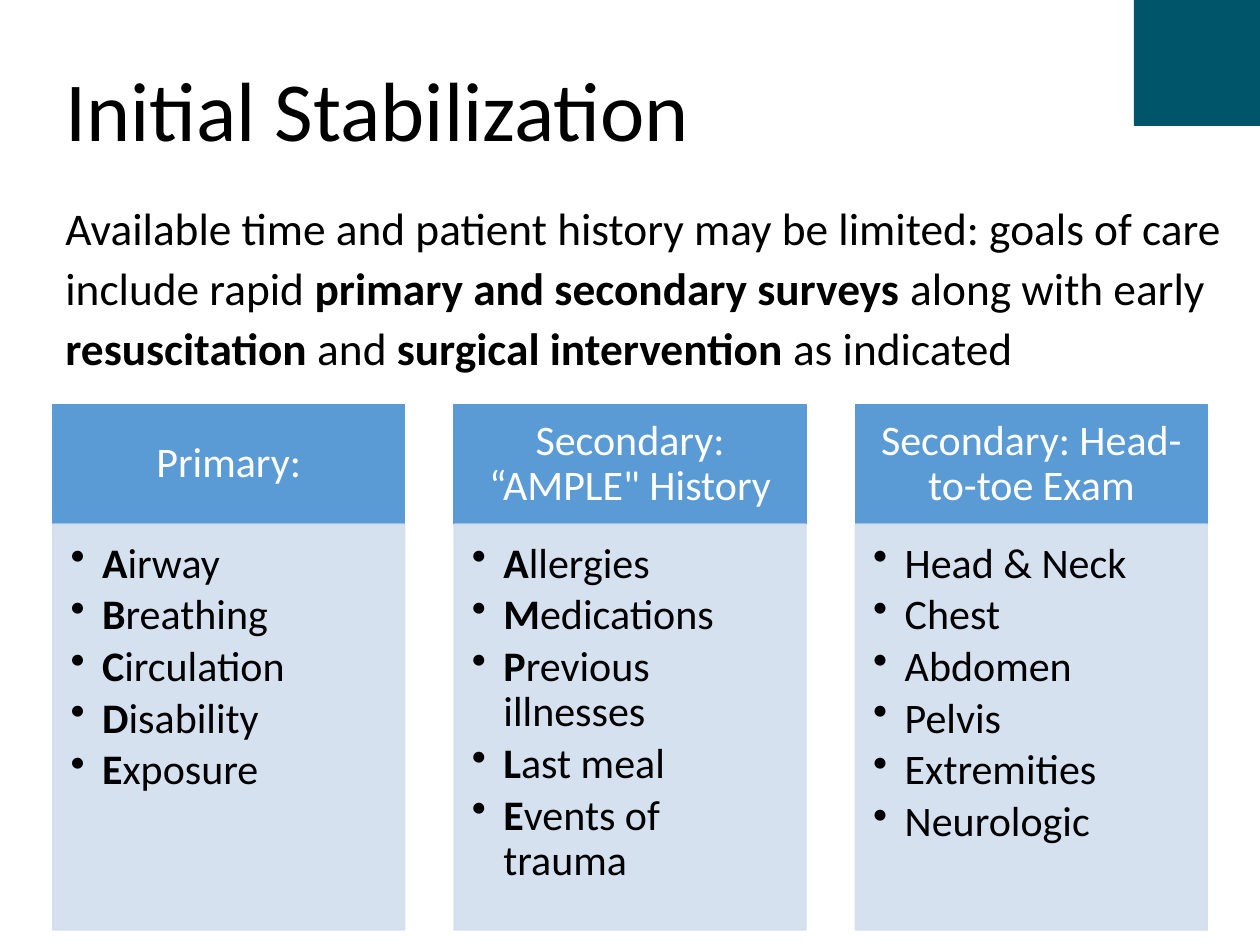
from dataclasses import dataclass
from typing import NamedTuple

from lxml import etree
from pptx import Presentation
from pptx.dml.color import RGBColor
from pptx.enum.shapes import MSO_SHAPE
from pptx.enum.text import MSO_ANCHOR, PP_ALIGN
from pptx.oxml.ns import qn
from pptx.util import Inches, Pt

RECTANGLE = MSO_SHAPE.RECTANGLE
TOP, MIDDLE = MSO_ANCHOR.TOP, MSO_ANCHOR.MIDDLE
LEFT, CENTER = PP_ALIGN.LEFT, PP_ALIGN.CENTER

COLORS = {
    "swoosh": "00556A",
    "header": "5B9BD5",
    "panel": "D2DEEF",
    "text": "000000",
    "header_text": "FFFFFF",
}
FONT = "Calibri"
COLUMN_LEFT, COLUMN_PITCH, COLUMN_WIDTH = 0.42, 3.185, 2.79
HEADER_TOP, HEADER_HEIGHT, PANEL_HEIGHT = 3.21, 0.95, 3.22
CURVE_STEPS = 60


class Box(NamedTuple):
    left: float
    top: float
    width: float
    height: float


class Piece(NamedTuple):
    text: str
    bold: bool = False


@dataclass
class Survey:
    heading: str
    items: list[str]
    mnemonic: bool


@dataclass
class Style:
    size: float
    color: str = "text"
    align: PP_ALIGN = LEFT
    line_spacing: float = 0.9
    space_after: float = 0


TITLE = Style(48)
SUMMARY = Style(25.9, line_spacing=1.1)
HEADING = Style(24, "header_text", CENTER)
ITEM = Style(24, space_after=3.6)

SUMMARY_PIECES = [
    Piece("Available time and patient history may be limited: goals of care include rapid "),
    Piece("primary and secondary surveys ", True),
    Piece("along with early "),
    Piece("resuscitation ", True),
    Piece("and "),
    Piece("surgical intervention ", True),
    Piece("as indicated"),
]
SURVEYS = [
    Survey("Primary:",
           ["Airway", "Breathing", "Circulation", "Disability", "Exposure"], True),
    Survey("Secondary: “AMPLE\" History",
           ["Allergies", "Medications", "Previous illnesses", "Last meal", "Events of trauma"],
           True),
    Survey("Secondary: Head-to-toe Exam",
           ["Head & Neck", "Chest", "Abdomen", "Pelvis", "Extremities", "Neurologic"], False),
]


def rgb(name: str) -> RGBColor:
    return RGBColor.from_string(COLORS[name])


def bezier(points: list[tuple[float, float]]) -> list[tuple[float, float]]:
    curve = []
    for step in range(1, CURVE_STEPS + 1):
        t = step / CURVE_STEPS
        weights = ((1 - t) ** 3, 3 * t * (1 - t) ** 2, 3 * t * t * (1 - t), t ** 3)
        curve.append(tuple(sum(w * p[axis] for w, p in zip(weights, points))
                           for axis in (0, 1)))
    return curve


def add_swoosh(slide) -> None:
    right_edge = bezier([(10, 0), (10, 0.14), (9.99, 1.15), (9.99, 1.29)])
    lower_edge = bezier([(9.99, 1.29), (9.98, 0), (3.36, 0.1), (0.03, 0.1)])
    builder = slide.shapes.build_freeform(0, 0, scale=Inches(1))
    builder.add_line_segments([(10, 0)] + right_edge + lower_edge, close=True)
    swoosh = builder.convert_to_shape()
    swoosh.shadow.inherit = False
    swoosh.fill.solid()
    swoosh.fill.fore_color.rgb = rgb("swoosh")
    swoosh.line.fill.background()


def write_paragraph(paragraph, pieces: list[Piece], style: Style) -> None:
    paragraph.alignment = style.align
    paragraph.line_spacing = style.line_spacing
    paragraph.space_after = Pt(style.space_after)
    for piece in pieces:
        run = paragraph.add_run()
        run.text = piece.text
        run.font.name = FONT
        run.font.size = Pt(style.size)
        run.font.bold = piece.bold
        run.font.color.rgb = rgb(style.color)


def set_frame(frame, anchor: MSO_ANCHOR, insets: tuple[float, ...]) -> None:
    frame.word_wrap = True
    frame.vertical_anchor = anchor
    (frame.margin_left, frame.margin_top,
     frame.margin_right, frame.margin_bottom) = map(Inches, insets)


def add_text(slide, box: Box, pieces: list[Piece], style: Style, anchor: MSO_ANCHOR) -> None:
    frame = slide.shapes.add_textbox(*map(Inches, box)).text_frame
    set_frame(frame, anchor, (0.1, 0.05, 0.1, 0.05))
    write_paragraph(frame.paragraphs[0], pieces, style)


def add_block(slide, box: Box, color: str, opacity: int = 100):
    block = slide.shapes.add_shape(RECTANGLE, *map(Inches, box))
    block.shadow.inherit = False
    block.fill.solid()
    block.fill.fore_color.rgb = rgb(color)
    block.line.color.rgb = rgb(color)
    block.line.width = Pt(1)
    if opacity < 100:
        for tint in block._element.spPr.iter(qn("a:srgbClr")):
            etree.SubElement(tint, qn("a:alpha")).set("val", str(opacity * 1000))
    return block


def add_bullet(paragraph) -> None:
    properties = paragraph._p.get_or_add_pPr()
    properties.set("marL", str(Inches(0.25)))
    properties.set("indent", str(Inches(-0.25)))
    etree.SubElement(properties, qn("a:buChar")).set("char", "•")


def add_survey(slide, survey: Survey, left: float) -> None:
    header = add_block(slide, Box(left, HEADER_TOP, COLUMN_WIDTH, HEADER_HEIGHT), "header")
    set_frame(header.text_frame, MIDDLE, (0.19, 0.11, 0.19, 0.11))
    write_paragraph(header.text_frame.paragraphs[0], [Piece(survey.heading)], HEADING)

    panel_box = Box(left, HEADER_TOP + HEADER_HEIGHT, COLUMN_WIDTH, PANEL_HEIGHT)
    frame = add_block(slide, panel_box, "panel", 90).text_frame
    set_frame(frame, TOP, (0.14, 0.14, 0.19, 0.21))
    for index, item in enumerate(survey.items):
        paragraph = frame.add_paragraph() if index else frame.paragraphs[0]
        add_bullet(paragraph)
        pieces = [Piece(item[0], True), Piece(item[1:])] if survey.mnemonic else [Piece(item)]
        write_paragraph(paragraph, pieces, ITEM)


def main() -> None:
    deck = Presentation()
    deck.slide_width, deck.slide_height = Inches(10), Inches(7.5)
    slide = deck.slides.add_slide(deck.slide_layouts[6])
    add_swoosh(slide)
    add_text(slide, Box(0.42, 0.4, 8.9, 1.02), [Piece("Initial Stabilization")], TITLE, MIDDLE)
    add_text(slide, Box(0.42, 1.5, 9.42, 1.75), SUMMARY_PIECES, SUMMARY, TOP)
    for index, survey in enumerate(SURVEYS):
        add_survey(slide, survey, COLUMN_LEFT + index * COLUMN_PITCH)
    deck.save("out.pptx")


if __name__ == "__main__":
    main()
